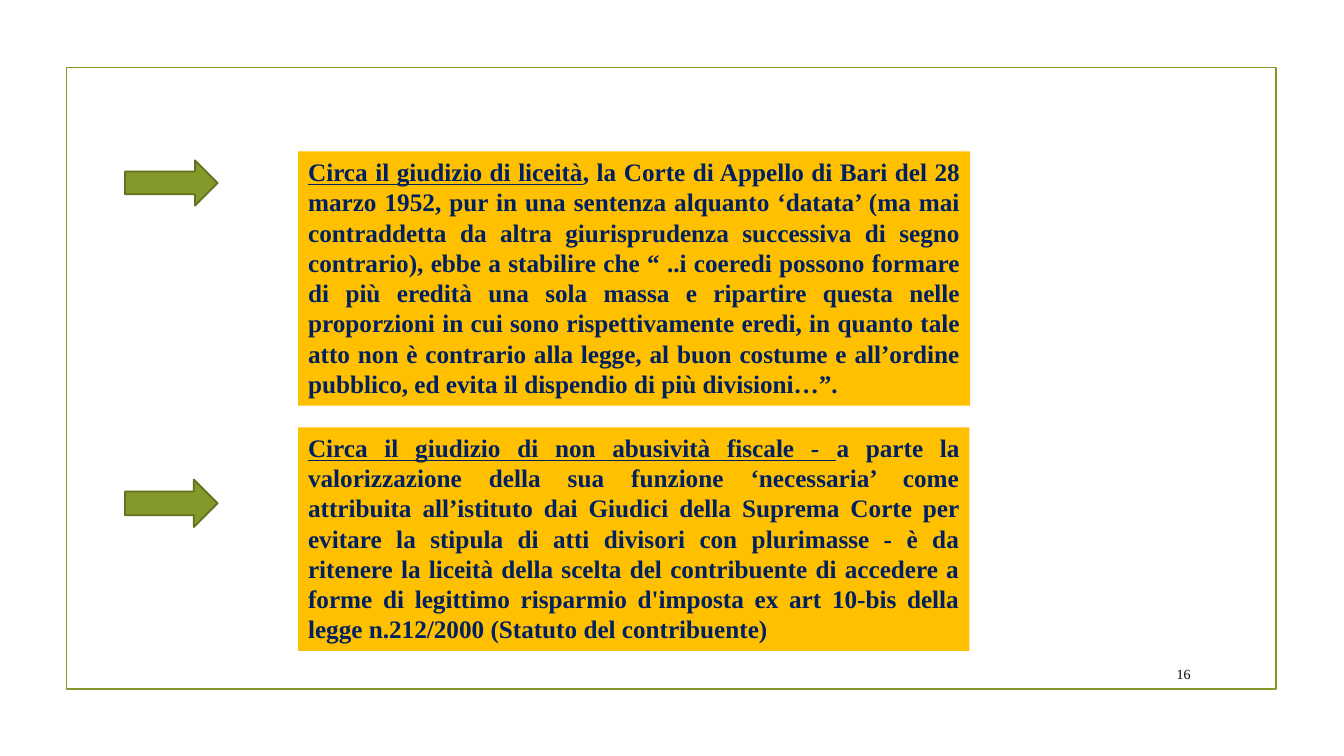
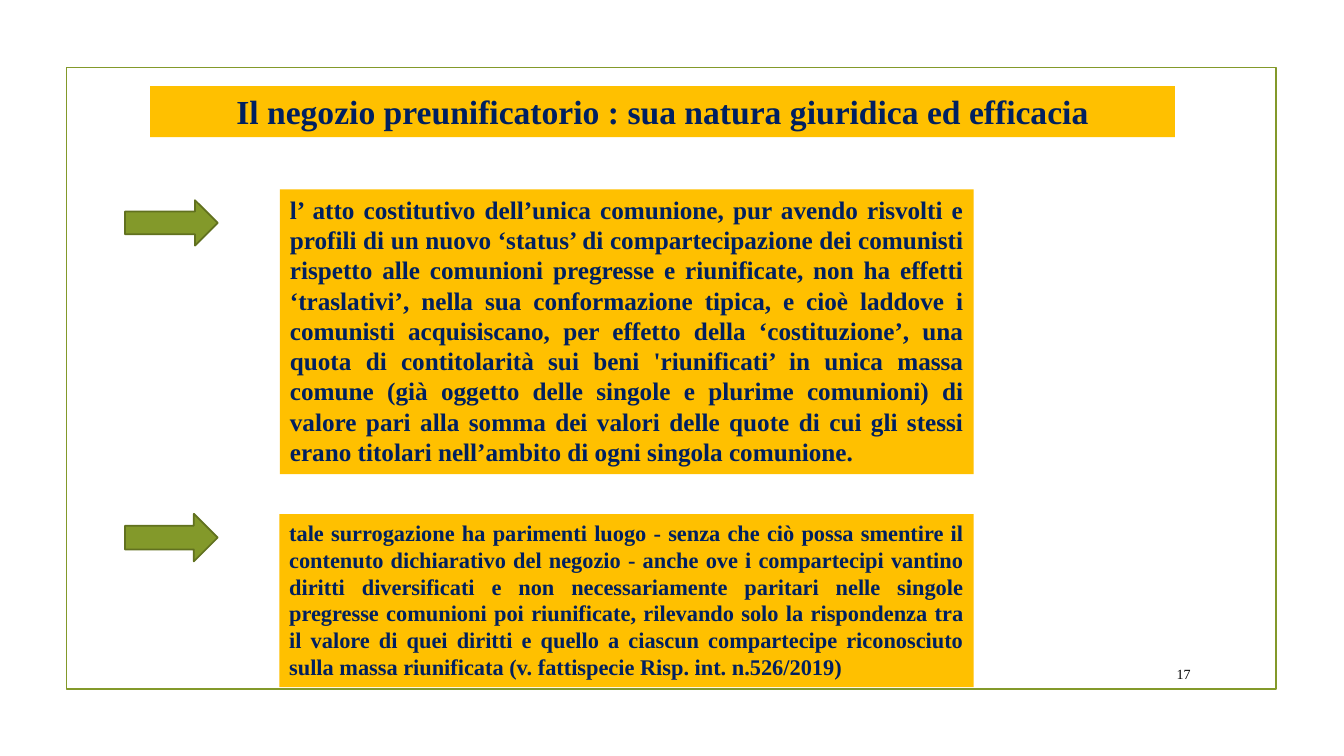
from dataclasses import dataclass

from pptx import Presentation
from pptx.dml.color import RGBColor
from pptx.enum.shapes import MSO_SHAPE as Preset
from pptx.enum.text import MSO_ANCHOR as Anchor, PP_ALIGN as Align
from pptx.util import Pt

WHITE = RGBColor(0xFF, 0xFF, 0xFF)
BLACK = RGBColor(0x00, 0x00, 0x00)
NAVY = RGBColor(0x00, 0x20, 0x60)
AMBER = RGBColor(0xFF, 0xC0, 0x00)
OLIVE = RGBColor(0x83, 0x99, 0x2A)
DARK_OLIVE = RGBColor(0x61, 0x71, 0x1F)

FONT = "Times New Roman"
LINE_WIDTH = 1.25
ARROW_LEFT, ARROW_WIDTH = 89.3, 66.2


@dataclass(frozen=True)
class Area:
    left: float
    top: float
    width: float
    height: float

    def in_points(self) -> tuple:
        return Pt(self.left), Pt(self.top), Pt(self.width), Pt(self.height)


@dataclass(frozen=True)
class Panel:
    area: Area
    text: str
    lead: str = ""
    size: float = 18
    align: Align = Align.JUSTIFY


@dataclass(frozen=True)
class Arrow:
    top: float
    height: float


@dataclass(frozen=True)
class Page:
    number: int
    panels: tuple
    arrows: tuple


FRAME = Area(47.5, 48.2, 864, 444)
NUMBER = Area(815, 470, 42.5, 22.3)

PAGES = (
    Page(
        16,
        panels=(
            Panel(
                Area(213, 108.2, 480, 181.5),
                ", la Corte di Appello di Bari del 28 marzo 1952, pur in una sentenza "
                "alquanto ‘datata’ (ma mai contraddetta da altra giurisprudenza successiva "
                "di segno contrario), ebbe a stabilire che “ ..i coeredi possono formare di "
                "più eredità una sola massa e ripartire questa nelle proporzioni in cui sono "
                "rispettivamente eredi, in quanto tale atto non è contrario alla legge, al "
                "buon costume e all’ordine pubblico, ed evita il dispendio di più divisioni…”.",
                lead="Circa il giudizio di liceità",
            ),
            Panel(
                Area(213, 305.2, 479.5, 159.8),
                "a parte la valorizzazione della sua funzione ‘necessaria’ come attribuita "
                "all’istituto dai Giudici della Suprema Corte per evitare la stipula di atti "
                "divisori con plurimasse - è da ritenere la liceità della scelta del "
                "contribuente di accedere a forme di legittimo risparmio d'imposta ex art "
                "10-bis della legge n.212/2000 (Statuto del contribuente)",
                lead="Circa il giudizio di non abusività fiscale - ",
            ),
        ),
        arrows=(Arrow(114.5, 32.4), Arrow(342.5, 34)),
    ),
    Page(
        17,
        panels=(
            Panel(
                Area(107.2, 61.6, 732, 36.3),
                "Il negozio preunificatorio : sua natura giuridica ed efficacia",
                size=24,
                align=Align.CENTER,
            ),
            Panel(
                Area(200, 135.2, 495.5, 203.5),
                "l’ atto costitutivo dell’unica comunione, pur avendo risvolti e profili di "
                "un nuovo ‘status’ di compartecipazione dei comunisti rispetto alle comunioni "
                "pregresse e riunificate, non ha effetti ‘traslativi’, nella sua conformazione "
                "tipica, e cioè laddove i comunisti acquisiscano, per effetto della "
                "‘costituzione’, una quota di contitolarità sui beni 'riunificati’ in unica "
                "massa comune (già oggetto delle singole e plurime comunioni) di valore pari "
                "alla somma dei valori delle quote di cui gli stessi erano titolari "
                "nell’ambito di ogni singola comunione.",
            ),
            Panel(
                Area(199.5, 367.2, 496, 123.6),
                "tale surrogazione ha parimenti luogo - senza che ciò possa smentire il "
                "contenuto dichiarativo del negozio - anche ove i compartecipi vantino diritti "
                "diversificati e non necessariamente paritari nelle singole pregresse "
                "comunioni poi riunificate, rilevando solo la rispondenza tra il valore di "
                "quei diritti e quello a ciascun compartecipe riconosciuto sulla massa "
                "riunificata (v. fattispecie Risp. int. n.526/2019)",
                size=16,
            ),
        ),
        arrows=(Arrow(143, 32.4), Arrow(367, 34)),
    ),
)


def add_preset(slide, preset: Preset, area: Area, fill=None, line=None):
    shape = slide.shapes.add_shape(preset, *area.in_points())
    shape.shadow.inherit = False
    if fill is None:
        shape.fill.background()
    else:
        shape.fill.solid()
        shape.fill.fore_color.rgb = fill
    if line is None:
        shape.line.fill.background()
    else:
        shape.line.color.rgb = line
        shape.line.width = Pt(LINE_WIDTH)
    return shape


def add_run(paragraph, text: str, *, size: float, color=NAVY, bold=True, underline=False) -> None:
    run = paragraph.add_run()
    run.text = text
    run.font.name = FONT
    run.font.size = Pt(size)
    run.font.color.rgb = color
    run.font.bold = bold
    run.font.underline = underline


def start_text(shape, align: Align, anchor: Anchor):
    frame = shape.text_frame
    frame.word_wrap = True
    frame.vertical_anchor = anchor
    paragraph = frame.paragraphs[0]
    paragraph.alignment = align
    return paragraph


def add_panel(slide, panel: Panel) -> None:
    shape = add_preset(slide, Preset.RECTANGLE, panel.area, fill=AMBER)
    paragraph = start_text(shape, panel.align, Anchor.TOP)
    if panel.lead:
        add_run(paragraph, panel.lead, size=panel.size, underline=True)
    add_run(paragraph, panel.text, size=panel.size)


def add_page_number(slide, number: int) -> None:
    shape = slide.shapes.add_textbox(*NUMBER.in_points())
    paragraph = start_text(shape, Align.RIGHT, Anchor.MIDDLE)
    add_run(paragraph, str(number), size=10, color=BLACK, bold=False)


def add_page(presentation, page: Page) -> None:
    slide = presentation.slides.add_slide(presentation.slide_layouts[6])
    slide.background.fill.solid()
    slide.background.fill.fore_color.rgb = WHITE
    add_preset(slide, Preset.RECTANGLE, FRAME, line=OLIVE)
    for panel in page.panels:
        add_panel(slide, panel)
    for arrow in page.arrows:
        area = Area(ARROW_LEFT, arrow.top, ARROW_WIDTH, arrow.height)
        add_preset(slide, Preset.RIGHT_ARROW, area, fill=OLIVE, line=DARK_OLIVE)
    add_page_number(slide, page.number)


def main() -> None:
    """Build the slides and save the presentation."""
    presentation = Presentation()
    presentation.slide_width = Pt(960)
    presentation.slide_height = Pt(540)
    for page in PAGES:
        add_page(presentation, page)
    presentation.save("out.pptx")


if __name__ == "__main__":
    main()
